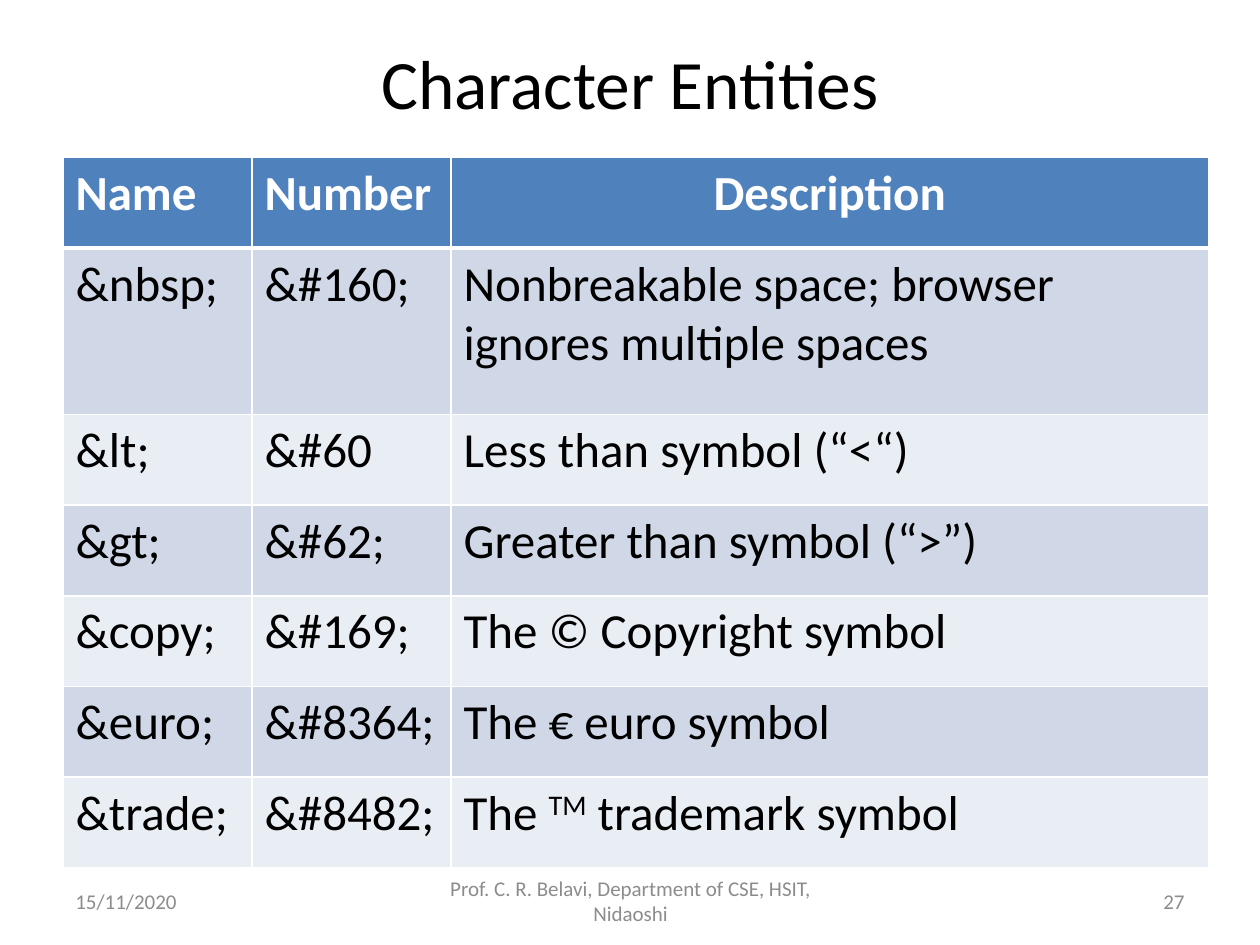
from lxml.etree import SubElement
from pptx import Presentation
from pptx.dml.color import RGBColor
from pptx.enum.text import MSO_ANCHOR as Anchor, PP_ALIGN as Align
from pptx.oxml.ns import qn
from pptx.util import Inches, Pt

COLORS = {
    "text": "000000", "footer": "8C8C8C", "white": "FFFFFF",
    "header": "4F81BD", "dark_band": "D0D8E8", "light_band": "E9EDF4",
}


def format_paragraph(paragraph, size, color, align, bold=False):
    paragraph.alignment = align
    for run in paragraph.runs:
        run.font.name = "Calibri"
        run.font.size = Pt(size)
        run.font.bold = bold
        run.font.color.rgb = RGBColor.from_string(COLORS[color])


def add_border(cell, side, width):
    line = SubElement(cell._tc.get_or_add_tcPr(), qn(f"a:ln{side}"), w=str(Pt(width)))
    fill = SubElement(line, qn("a:solidFill"))
    SubElement(fill, qn("a:srgbClr"), val=COLORS["white"])


presentation = Presentation()
presentation.slide_width = Inches(10)
presentation.slide_height = Inches(7.5)
slide = presentation.slides.add_slide(presentation.slide_layouts[6])

# Title and footer: text, left, top, width, height, size, color, alignment
texts = [
    ("Character Entities", 0.5, 0.3, 9, 0.7, 39.6, "text", Align.CENTER),
    ("15/11/2020", 0.5, 6.95, 2.33, 0.4, 12, "footer", Align.LEFT),
    ("Prof. C. R. Belavi, Department of CSE, HSIT, Nidaoshi",
     3.42, 6.95, 3.17, 0.4, 12, "footer", Align.CENTER),
    ("27", 7.17, 6.95, 2.33, 0.4, 12, "footer", Align.RIGHT),
]
for text, left, top, width, height, size, color, align in texts:
    box = slide.shapes.add_textbox(Inches(left), Inches(top), Inches(width), Inches(height))
    text_frame = box.text_frame
    text_frame.word_wrap = True
    text_frame.vertical_anchor = Anchor.MIDDLE
    text_frame.text = text
    format_paragraph(text_frame.paragraphs[0], size, color, align)

# Entity table
entities = [
    ("Name", "Number", "Description"),
    ("&nbsp;", "&#160;", "Nonbreakable space; browser ignores multiple spaces"),
    ("&lt;", "&#60", "Less than symbol (“<“)"),
    ("&gt;", "&#62;", "Greater than symbol (“>”)"),
    ("&copy;", "&#169;", "The © Copyright symbol"),
    ("&euro;", "&#8364;", "The € euro symbol"),
    ("&trade;", "&#8482;", ("The ", "TM", " trademark symbol")),
]
column_widths = [1.5, 1.58, 6.01]
row_heights = [0.72, 1.32] + [0.72] * 5
table = slide.shapes.add_table(
    len(entities), len(column_widths), Inches(0.5), Inches(1.25),
    Inches(sum(column_widths)), Inches(sum(row_heights))).table
for column, width in zip(table.columns, column_widths):
    column.width = Inches(width)

for row_index, values in enumerate(entities):
    table.rows[row_index].height = Inches(row_heights[row_index])
    is_header = row_index == 0
    band = "header" if is_header else "dark_band" if row_index % 2 else "light_band"
    for column_index, value in enumerate(values):
        cell = table.cell(row_index, column_index)
        for side in "LRTB":
            thick = (is_header and side == "B") or (row_index == 1 and side == "T")
            add_border(cell, side, 3 if thick else 1)
        cell.fill.solid()
        cell.fill.fore_color.rgb = RGBColor.from_string(COLORS[band])

        paragraph = cell.text_frame.paragraphs[0]
        for part in [value] if isinstance(value, str) else value:
            run = paragraph.add_run()
            run.text = part
            if part == "TM":
                run.font._element.set("baseline", "30000")  # superscript
        align = Align.CENTER if is_header and column_index == 2 else Align.LEFT
        format_paragraph(paragraph, 28, "white" if is_header else "text", align, is_header)

presentation.save("out.pptx")
